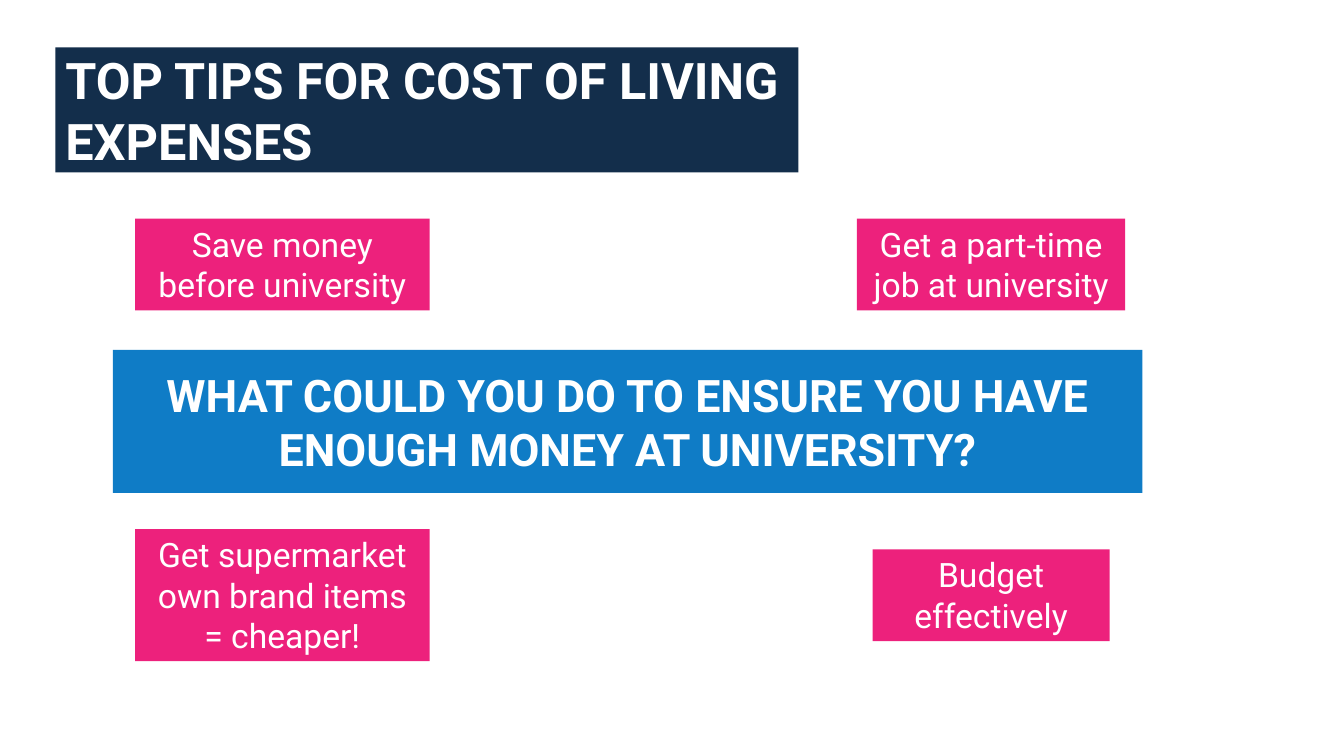
from pptx import Presentation
from pptx.dml.color import RGBColor
from pptx.enum.shapes import MSO_SHAPE
from pptx.enum.text import MSO_ANCHOR, MSO_AUTO_SIZE, PP_ALIGN
from pptx.util import Inches, Pt

RECTANGLE = MSO_SHAPE.RECTANGLE
MIDDLE, TOP = MSO_ANCHOR.MIDDLE, MSO_ANCHOR.TOP
LEFT, CENTER = PP_ALIGN.LEFT, PP_ALIGN.CENTER
GROW = MSO_AUTO_SIZE.SHAPE_TO_FIT_TEXT
FIXED = MSO_AUTO_SIZE.NONE

THEME = {
    "font": "Roboto",
    "text": RGBColor.from_string("FFFFFF"),
    "title": RGBColor.from_string("132E4B"),
    "question": RGBColor.from_string("0F7CC6"),
    "tip": RGBColor.from_string("ED217C"),
    "title_size": Pt(36),
    "question_size": Pt(32),
    "tip_size": Pt(24),
}

deck = Presentation()
deck.slide_width = Inches(13.33)
deck.slide_height = Inches(7.5)
page = deck.slides.add_slide(deck.slide_layouts[6])


def add_box(text, *, center, size, role, align=CENTER, anchor=MIDDLE,
            bold=False, fit=FIXED):
    """Place a filled box by its centre, in inches, styled by its theme role."""
    width, height = size
    box = page.shapes.add_shape(
        RECTANGLE,
        Inches(center[0] - width / 2), Inches(center[1] - height / 2),
        Inches(width), Inches(height),
    )
    box.shadow.inherit = False
    box.fill.solid()
    box.fill.fore_color.rgb = THEME[role]
    box.line.fill.background()
    frame = box.text_frame
    frame.word_wrap = True
    frame.auto_size = fit
    frame.vertical_anchor = anchor
    para = frame.paragraphs[0]
    para.alignment = align
    span = para.add_run()
    span.text = text
    span.font.name = THEME["font"]
    span.font.size = THEME[role + "_size"]
    span.font.bold = bold
    span.font.color.rgb = THEME["text"]


add_box("TOP TIPS FOR COST OF LIVING EXPENSES", role="title",
        center=(4.235, 1.09), size=(7.37, 1.24), align=LEFT, bold=True)
add_box("WHAT COULD YOU DO TO ENSURE YOU HAVE ENOUGH MONEY AT UNIVERSITY?",
        role="question", center=(6.225, 4.18), size=(10.21, 1.42), bold=True)

# Tips sit on a two by two grid around the question
tip_columns = (2.8, 9.83)
tip_rows = (2.625, 5.905)
two_lines, three_lines = 0.91, 1.31
tips = [
    [("Save money before university", 2.92, two_lines),
     ("Get a part-time job at university", 2.66, two_lines)],
    [("Get supermarket own brand items = cheaper!", 2.92, three_lines),
     ("Budget effectively", 2.35, two_lines)],
]
for row_center, row in zip(tip_rows, tips):
    for column_center, (text, width, height) in zip(tip_columns, row):
        add_box(text, role="tip", center=(column_center, row_center),
                size=(width, height), anchor=TOP, fit=GROW)

deck.save("out.pptx")
